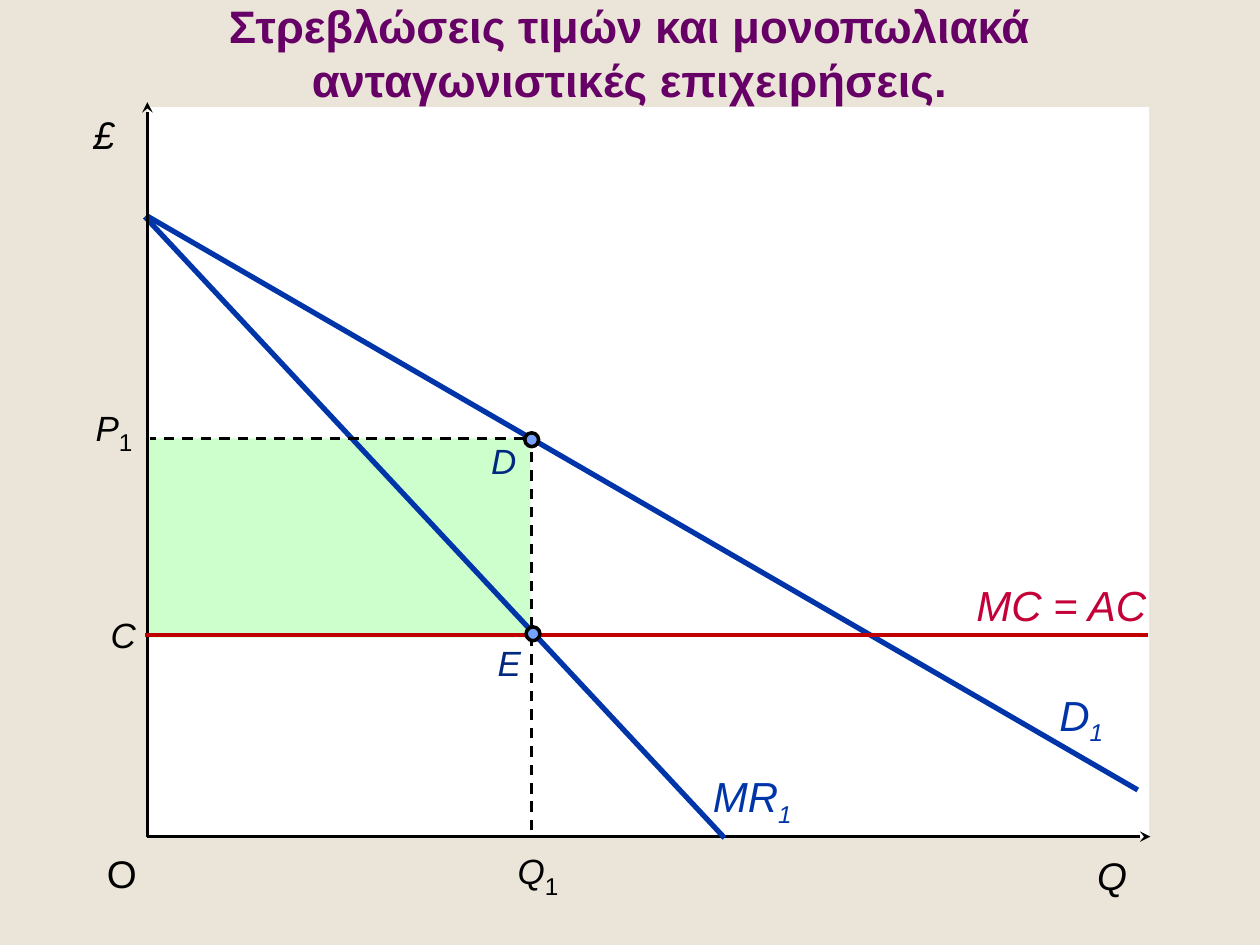
"""Build a slide on price distortions and monopolistically competitive firms."""
from lxml import etree
from pptx import Presentation
from pptx import util as u
from pptx.dml.color import RGBColor
from pptx.enum import dml, shapes, text
from pptx.oxml.ns import qn

THEME = {
    "font": "Arial",
    "bg": "EAE5D8", "plot": "FFFFFF", "profit": "CCFFCC", "ink": "000000",
    "title": "660066", "curve": "0035AA", "point": "002880", "dot": "77A1FF",
    "cost": "C00000", "cost_label": "C40038",
    "title_size": 26, "curve_size": 24, "axis_size": 22, "mark_size": 20, "sub_size": 24,
    "curve_line": 3, "cost_line": 2.5, "axis_line": 2, "guide_line": 1.5,
}
COLS, ROWS = 100, 75
DOT = 1.1

TITLE = ["Στρεβλώσεις τιμών και μονοπωλιακά", "ανταγωνιστικές επιχειρήσεις."]

AXIS_X, AXIS_Y = 11.7, 66.4
PRICE_Y, COST_Y, QTY_X = 34.8, 50.4, 42.2

AREAS = [
    ((AXIS_X, 8.5, 79.5, 58), "plot"),
    ((11.8, PRICE_Y, 30.3, COST_Y - PRICE_Y + 0.2), "profit"),
]

LINES = [
    ((QTY_X, 65.9), (QTY_X, 34.9), "ink", "guide_line", "dash"),
    ((11.6, 17.1), (90.3, 62.7), "curve", "curve_line", None),
    ((AXIS_X, AXIS_Y), (91.3, AXIS_Y), "ink", "axis_line", "arrow"),
    ((11.5, 17.2), (57.5, 66.5), "curve", "curve_line", None),
    ((AXIS_X, AXIS_Y), (AXIS_X, 8.1), "ink", "axis_line", "arrow"),
    ((41.6, PRICE_Y), (11.9, PRICE_Y), "ink", "guide_line", "dash"),
    ((91.1, COST_Y), (11.5, COST_Y), "cost", "cost_line", None),
]

DOTS = [(QTY_X, 34.9), (QTY_X + 0.1, 50.3)]

LABELS = [
    ((6.4, 8.3, 4.6, 4.7), "£", "", "ink", "axis_size"),
    ((86.1, 67.1, 5.2, 4.7), "Q", "", "ink", "axis_size"),
    ((7.5, 67, 4.4, 4.7), "O", "", "ink", "axis_size"),
    ((40.1, 66.4, 5.4, 4.3), "Q", "1", "ink", "mark_size"),
    ((83.1, 54.2, 5.7, 5), "D", "1", "curve", "curve_size"),
    ((55.6, 60.7, 8.4, 5), "MR", "1", "curve", "curve_size"),
    ((6.6, 31.2, 5.1, 4.3), "P", "1", "ink", "mark_size"),
    ((38, 34.4, 4, 4.3), "D", "", "point", "mark_size"),
    ((76.5, 45.5, 15.6, 5), "MC = AC", "", "cost_label", "curve_size"),
    ((7.8, 48.2, 4, 4.3), "C", "", "ink", "mark_size"),
    ((38.5, 50.4, 3.9, 4.3), "E", "", "point", "mark_size"),
]

prs = Presentation()
prs.slide_width, prs.slide_height = u.Inches(10), u.Inches(7.5)
s = prs.slides.add_slide(prs.slide_layouts[6])


def color(name):
    return RGBColor.from_string(THEME[name])


def place(*values):
    units = (prs.slide_width / COLS, prs.slide_height / ROWS)
    return [round(v * units[i % 2]) for i, v in enumerate(values)]


def add_area(kind, box, fill, line=None):
    sp = s.shapes.add_shape(kind, *place(*box))
    sp.shadow.inherit = False
    sp.fill.solid()
    sp.fill.fore_color.rgb = color(fill)
    if line:
        sp.line.color.rgb = color(line)
        sp.line.width = u.Pt(THEME["axis_line"])
    else:
        sp.line.fill.background()


def add_line(start, end, ink, width, style):
    c = s.shapes.add_connector(shapes.MSO_CONNECTOR.STRAIGHT, *place(*start, *end))
    c.line.color.rgb = color(ink)
    c.line.width = u.Pt(THEME[width])
    if style == "dash":
        c.line.dash_style = dml.MSO_LINE.DASH
    elif style == "arrow":
        etree.SubElement(c.line._get_or_add_ln(), qn("a:tailEnd"), type="stealth")
    etree.SubElement(c._element.spPr, qn("a:effectLst"))


def add_run(p, words, ink, size, bold=False, italic=False):
    r = p.add_run()
    r.text = words
    f = r.font
    f.name, f.size, f.bold, f.italic = THEME["font"], u.Pt(THEME[size]), bold, italic
    f.color.rgb = color(ink)
    return r


def add_box(box, wrap):
    tf = s.shapes.add_textbox(*place(*box)).text_frame
    tf.word_wrap = wrap
    return tf


def add_label(box, name, sub, ink, size):
    tf = add_box(box, False)
    tf.auto_size = text.MSO_AUTO_SIZE.SHAPE_TO_FIT_TEXT
    p = tf.paragraphs[0]
    add_run(p, name, ink, size, italic=name != "O")
    if sub:
        r = add_run(p, sub, ink, "sub_size", italic=ink == "curve")
        r.font._element.set("baseline", "-25000")


def add_shadow(r):
    effects = etree.Element(qn("a:effectLst"))
    shadow = etree.SubElement(effects, qn("a:outerShdw"), dist="35921", dir="2700000", algn="ctr")
    etree.SubElement(shadow, qn("a:srgbClr"), val=THEME["ink"])
    r.font._element.find(qn("a:solidFill")).addnext(effects)


def add_title():
    tf = add_box((0, 0, COLS, 8.3), True)
    tf.vertical_anchor = text.MSO_ANCHOR.MIDDLE
    p = tf.paragraphs[0]
    p.alignment = text.PP_ALIGN.CENTER
    for i, words in enumerate(TITLE):
        if i:
            p.add_line_break()
        add_shadow(add_run(p, words, "title", "title_size", bold=True))


s.background.fill.solid()
s.background.fill.fore_color.rgb = color("bg")
for box, fill in AREAS:
    add_area(shapes.MSO_SHAPE.RECTANGLE, box, fill)
for line in LINES:
    add_line(*line)
for x, y in DOTS:
    add_area(shapes.MSO_SHAPE.OVAL, (x - DOT / 2, y - DOT / 2, DOT, DOT), "dot", "ink")
add_title()
for label in LABELS:
    add_label(*label)
prs.save("out.pptx")
